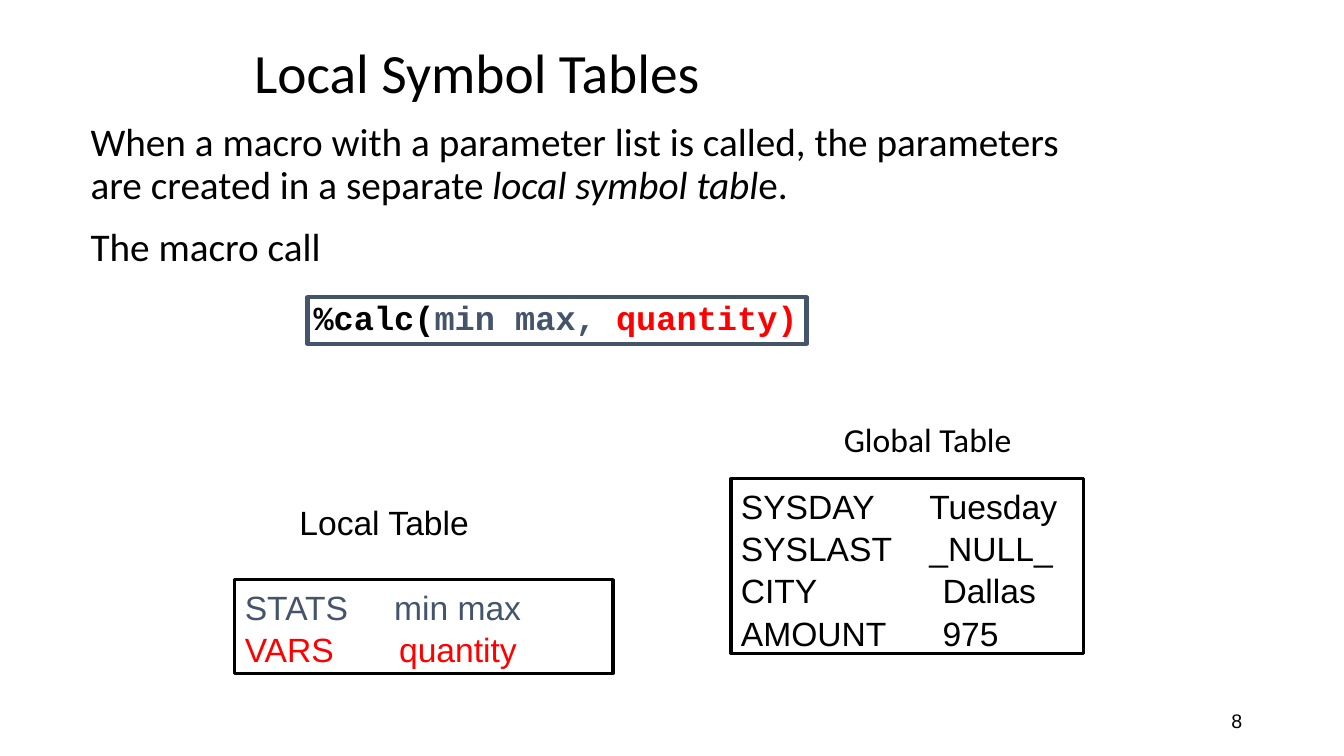
import pptx
import pptx.dml.color
import pptx.enum.shapes
import pptx.enum.text
import pptx.oxml.ns
import pptx.util
from dataclasses import dataclass
from lxml import etree

Inches = pptx.util.Inches
Pt = pptx.util.Pt
ALIGN = pptx.enum.text.PP_ALIGN
ANCHOR = pptx.enum.text.MSO_ANCHOR


@dataclass(frozen=True)
class Theme:
    black: str = "000000"
    white: str = "FFFFFF"
    slate: str = "44546A"
    red: str = "FF0000"
    heading: str = "Calibri"
    sans: str = "Arial"
    mono: str = "Courier New"
    title_size: float = 39.6
    body_size: float = 28
    table_size: float = 24
    number_size: float = 14


THEME = Theme()


def rgb(color):
    return pptx.dml.color.RGBColor.from_string(color)


def add_run(p, text, size, font, color=THEME.black, bold=False, italic=False):
    r = p.add_run()
    r.text = text
    r.font.size = Pt(size)
    r.font.name = font
    r.font.color.rgb = rgb(color)
    r.font.bold = bold
    r.font.italic = italic


def add_label(slide, box, text, size, font, align=ALIGN.LEFT, indent=0.1):
    sp = slide.shapes.add_textbox(*map(Inches, box))
    tf = sp.text_frame
    tf.word_wrap = True
    tf.margin_left = Inches(indent)
    p = tf.paragraphs[0]
    p.alignment = align
    add_run(p, text, size, font)
    return sp


def add_box(slide, box, line_color, line_width):
    sp = slide.shapes.add_shape(
        pptx.enum.shapes.MSO_SHAPE.RECTANGLE, *map(Inches, box))
    sp.shadow.inherit = False
    sp.fill.solid()
    sp.fill.fore_color.rgb = rgb(THEME.white)
    sp.line.color.rgb = rgb(line_color)
    sp.line.width = Pt(line_width)
    sp.text_frame.vertical_anchor = ANCHOR.TOP
    sp.text_frame.word_wrap = True
    return sp


def add_tab_stop(p, pos):
    tabs = etree.SubElement(p._p.get_or_add_pPr(), pptx.oxml.ns.qn("a:tabLst"))
    etree.SubElement(tabs, pptx.oxml.ns.qn("a:tab"),
                     pos=str(Inches(pos)), algn="l")


def add_symbol_table(slide, box, rows):
    """Each row holds a name, a value, the offset of the value and a colour."""
    tf = add_box(slide, box, THEME.black, 2.25).text_frame
    for i, (name, value, offset, color) in enumerate(rows):
        p = tf.add_paragraph() if i else tf.paragraphs[0]
        p.alignment = ALIGN.LEFT
        p.line_spacing = 1.05
        add_tab_stop(p, offset)
        add_run(p, f"{name}\t{value}", THEME.table_size, THEME.sans, color)


def add_title(slide, text):
    sp = slide.shapes.title
    sp.left, sp.top, sp.width, sp.height = map(Inches, (2.42, 0.5, 9.16, 0.5))
    tf = sp.text_frame
    tf.vertical_anchor = ANCHOR.MIDDLE
    p = tf.paragraphs[0]
    p.alignment = ALIGN.LEFT
    p.line_spacing = 0.9
    add_run(p, text, THEME.title_size, THEME.heading)


def add_body(slide, paragraphs):
    sp = slide.shapes.add_textbox(*map(Inches, (0.8, 1.17, 10.11, 2.17)))
    tf = sp.text_frame
    tf.word_wrap = True
    for i, parts in enumerate(paragraphs):
        p = tf.add_paragraph() if i else tf.paragraphs[0]
        p.line_spacing = 0.9
        p.space_before = Pt(THEME.body_size / 2 if i else 0)
        for text, italic in parts:
            add_run(p, text, THEME.body_size, THEME.heading, italic=italic)


def add_macro_call(slide, parts):
    tf = add_box(slide, (3.05, 2.95, 4.95, 0.46), THEME.slate, 3).text_frame
    tf.word_wrap = False
    tf.margin_left = tf.margin_right = Inches(0.06)
    tf.margin_top = tf.margin_bottom = Inches(0.06)
    p = tf.paragraphs[0]
    p.alignment = ALIGN.LEFT
    p.line_spacing = 0.85
    for text, color in parts:
        add_run(p, text, THEME.table_size, THEME.mono, color, bold=True)


def main():
    prs = pptx.Presentation()
    prs.slide_width, prs.slide_height = Inches(13.33), Inches(7.5)
    slide = prs.slides.add_slide(prs.slide_layouts[5])

    # Title and explanation
    add_title(slide, "Local Symbol Tables")
    add_body(slide, [
        [("When a macro with a parameter list is called, the parameters "
          "are created in a separate ", False),
         ("local symbol tabl", True), ("e.", False)],
        [("The macro call", False)],
    ])
    add_macro_call(slide, [("%calc(", THEME.black),
                           ("min max, ", THEME.slate),
                           ("quantity)", THEME.red)])

    # Local symbol table
    add_label(slide, (2.22, 4.93, 3.17, 0.5), "Local Table",
              THEME.table_size, THEME.sans, indent=0.75)
    add_symbol_table(slide, (2.33, 5.75, 3.75, 0.93), [
        ("STATS", "min max", 1.48, THEME.slate),
        ("VARS", "quantity", 1.53, THEME.red),
    ])

    # Global symbol table
    label = add_label(slide, (8.27, 4.11, 1.88, 0.5), "Global Table",
                      THEME.table_size, THEME.heading)
    label.text_frame.word_wrap = False
    add_symbol_table(slide, (7.25, 4.75, 3.5, 1.73), [
        ("SYSDAY", "Tuesday", 1.87, THEME.black),
        ("SYSLAST", "_NULL_", 1.87, THEME.black),
        ("CITY", "Dallas", 2, THEME.black),
        ("AMOUNT", "975", 2, THEME.black),
    ])

    # Slide number
    number = add_label(slide, (9.42, 6.95, 3, 0.4), "8", THEME.number_size,
                       THEME.sans, ALIGN.RIGHT)
    number.text_frame.vertical_anchor = ANCHOR.MIDDLE

    prs.save("out.pptx")


if __name__ == "__main__":
    main()
